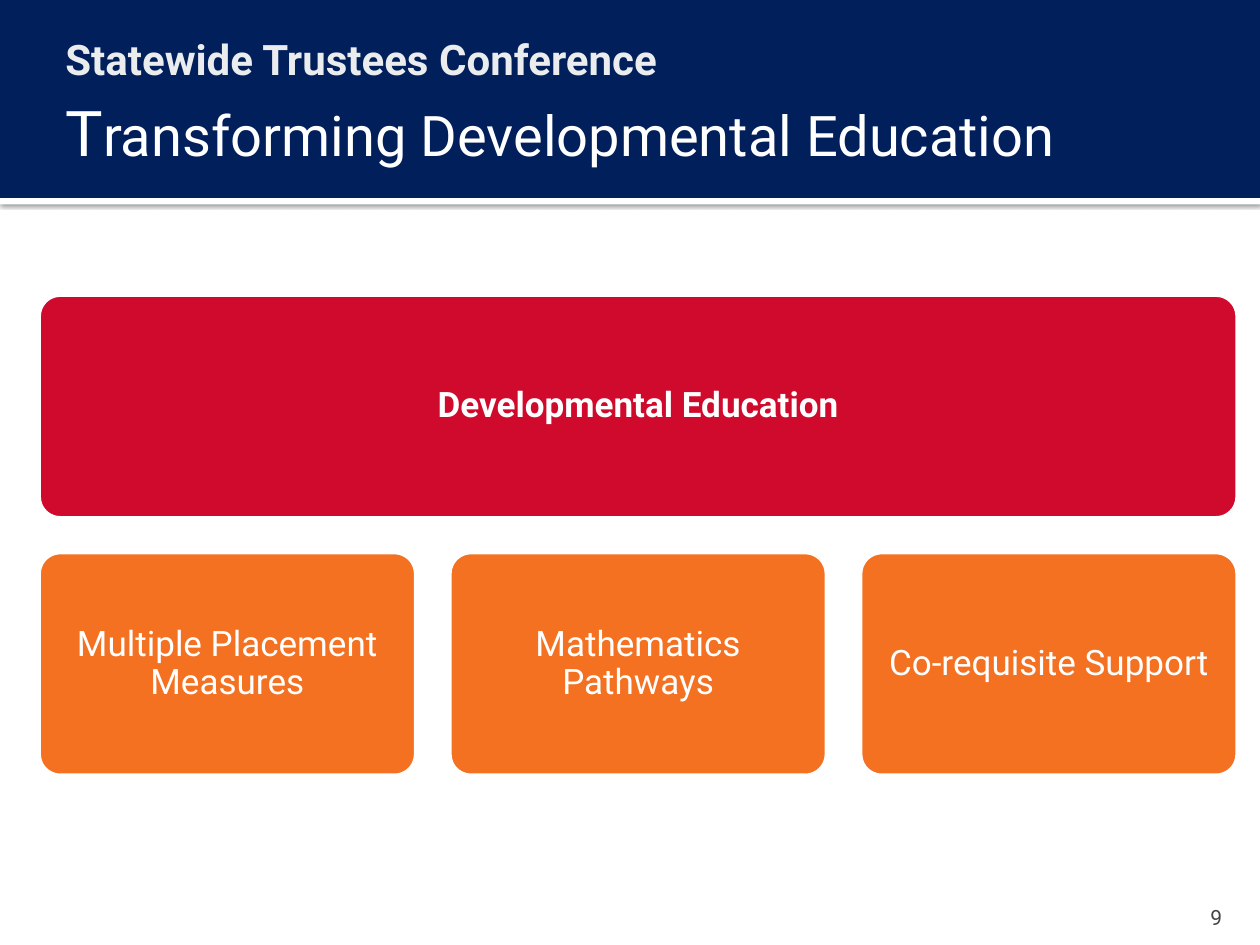
from lxml import etree
from pptx import Presentation
from pptx.dml.color import RGBColor
from pptx.enum import shapes, text
from pptx.oxml import ns
from pptx.util import Cm, Pt

NAVY = RGBColor(0x00, 0x1F, 0x5B)
RED = RGBColor(0xCF, 0x0A, 0x2C)
ORANGE = RGBColor(0xF3, 0x71, 0x21)
WHITE = RGBColor(0xFF, 0xFF, 0xFF)
PALE = RGBColor(0xEA, 0xEC, 0xEE)
GREY = RGBColor(0x45, 0x45, 0x45)
KIND = shapes.MSO_SHAPE
ALIGN = text.PP_ALIGN
ANCHOR = text.MSO_ANCHOR


def panel(kind, left, top, width, height, fill):
    item = slide.shapes.add_shape(kind, Cm(left), Cm(top), Cm(width), Cm(height))
    item.shadow.inherit = False
    item.fill.solid()
    item.fill.fore_color.rgb = fill
    item.line.fill.background()
    return item


def write(item, words, size, color, align, anchor, pads, bold=False):
    frame = item.text_frame
    frame.word_wrap = True
    frame.auto_size = text.MSO_AUTO_SIZE.NONE
    frame.vertical_anchor = anchor
    frame.margin_left, frame.margin_top, frame.margin_right, frame.margin_bottom = map(Cm, pads)
    para = frame.paragraphs[0]
    para.alignment = align
    for word in words:
        para.add_run().text = word
    para.font.name = "Roboto"
    para.font.size = Pt(size)
    para.font.bold = bold
    para.font.color.rgb = color
    return para


deck = Presentation()
deck.slide_width, deck.slide_height = Cm(25.4), Cm(19.05)
slide = deck.slides.add_slide(deck.slide_layouts[5])

strip = panel(KIND.RECTANGLE, 0, 3.99, 25.4, 0.13, WHITE)
effects = strip._element.spPr.find(ns.qn("a:effectLst"))
shade = etree.SubElement(effects, ns.qn("a:outerShdw"), blurRad="31750", dist="10160",
                         dir="5400000", algn="t", rotWithShape="0")
tint = etree.SubElement(shade, ns.qn("a:srgbClr"), val="000000")
etree.SubElement(tint, ns.qn("a:alpha"), val="60000")
banner = panel(KIND.RECTANGLE, 0, 0, 25.4, 3.99, NAVY)

title = slide.shapes.title
title.left, title.top, title.width, title.height = Cm(1.07), Cm(1.47), Cm(23.29), Cm(2.34)
para = write(title, ["T", "ransforming Developmental Education"], 32, WHITE,
             ALIGN.LEFT, ANCHOR.MIDDLE, (0.25, 0.13, 0.13, 0.13))
para.runs[0].font.size = Pt(36)
banner._element.addnext(title._element)

head = slide.shapes.add_textbox(Cm(0.84), Cm(0.43), Cm(23.72), Cm(1.27))
write(head, ["Statewide Trustees Conference"], 24, PALE,
      ALIGN.LEFT, ANCHOR.TOP, (0.48, 0.25, 0.25, 0.13), True)
page = slide.shapes.add_textbox(Cm(22.86), Cm(17.98), Cm(2.03), Cm(0.76))
write(page, ["9"], 12, GREY, ALIGN.RIGHT, ANCHOR.BOTTOM, (0.25, 0.13, 0.25, 0))

left, width, height, step = 0.76, 7.65, 4.55, 8.28
boxes = [("Developmental Education", left, 5.92, width + 2 * step, RED)]
topics = ["Multiple Placement Measures", "Mathematics Pathways", "Co-requisite Support"]
for col, topic in enumerate(topics):
    boxes.append((topic, left + col * step, 11.11, width, ORANGE))

for label, x, y, wide, fill in boxes:
    box = panel(KIND.ROUNDED_RECTANGLE, x, y, wide, height, fill)
    box.adjustments[0] = 0.1
    box.line.color.rgb = WHITE
    box.line.width = Pt(3.78)
    para = write(box, [label], 20, WHITE, ALIGN.CENTER, ANCHOR.MIDDLE,
                 (0.25, 0.25, 0.25, 0.25), fill == RED)
    para.line_spacing = 0.9

deck.save("out.pptx")
